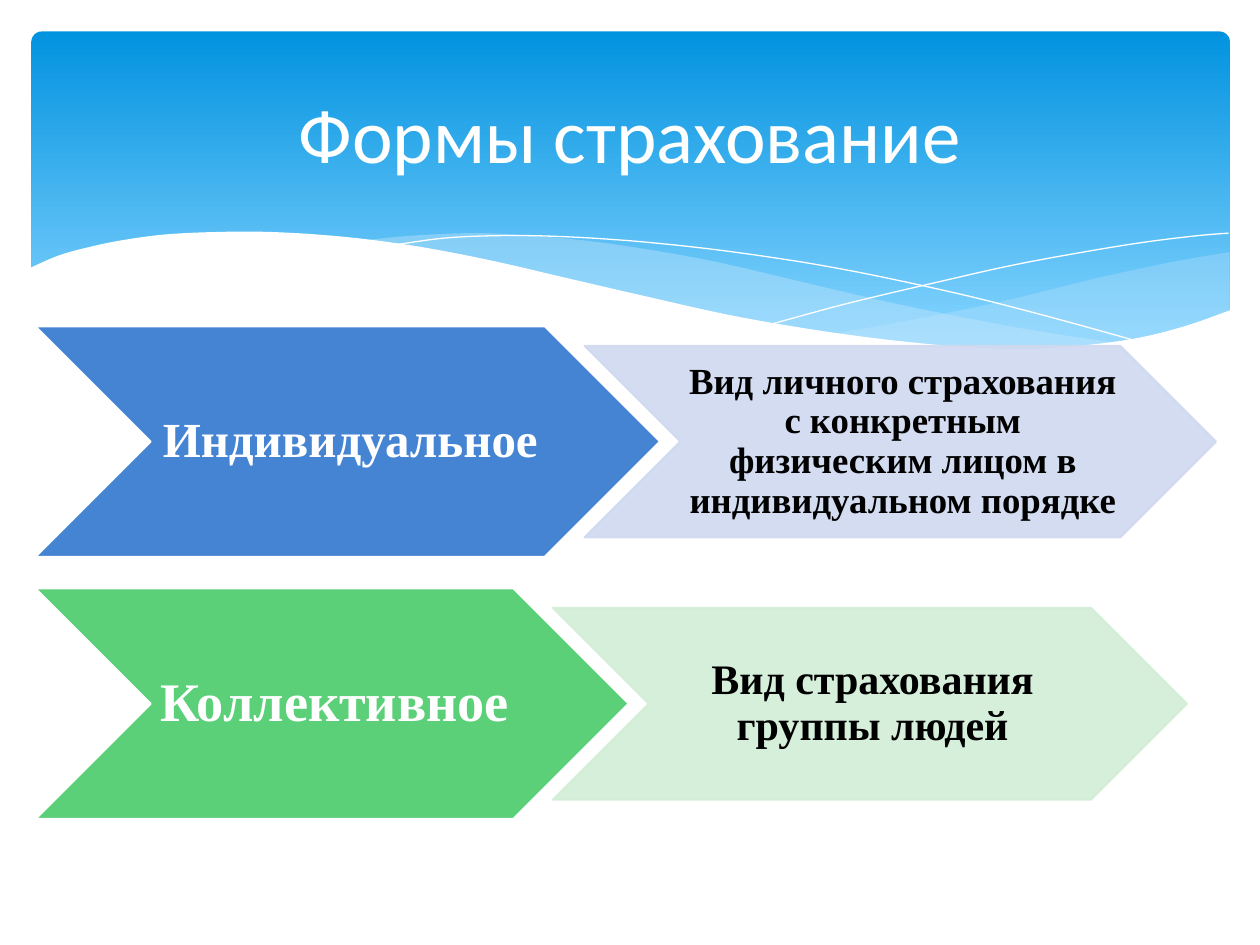
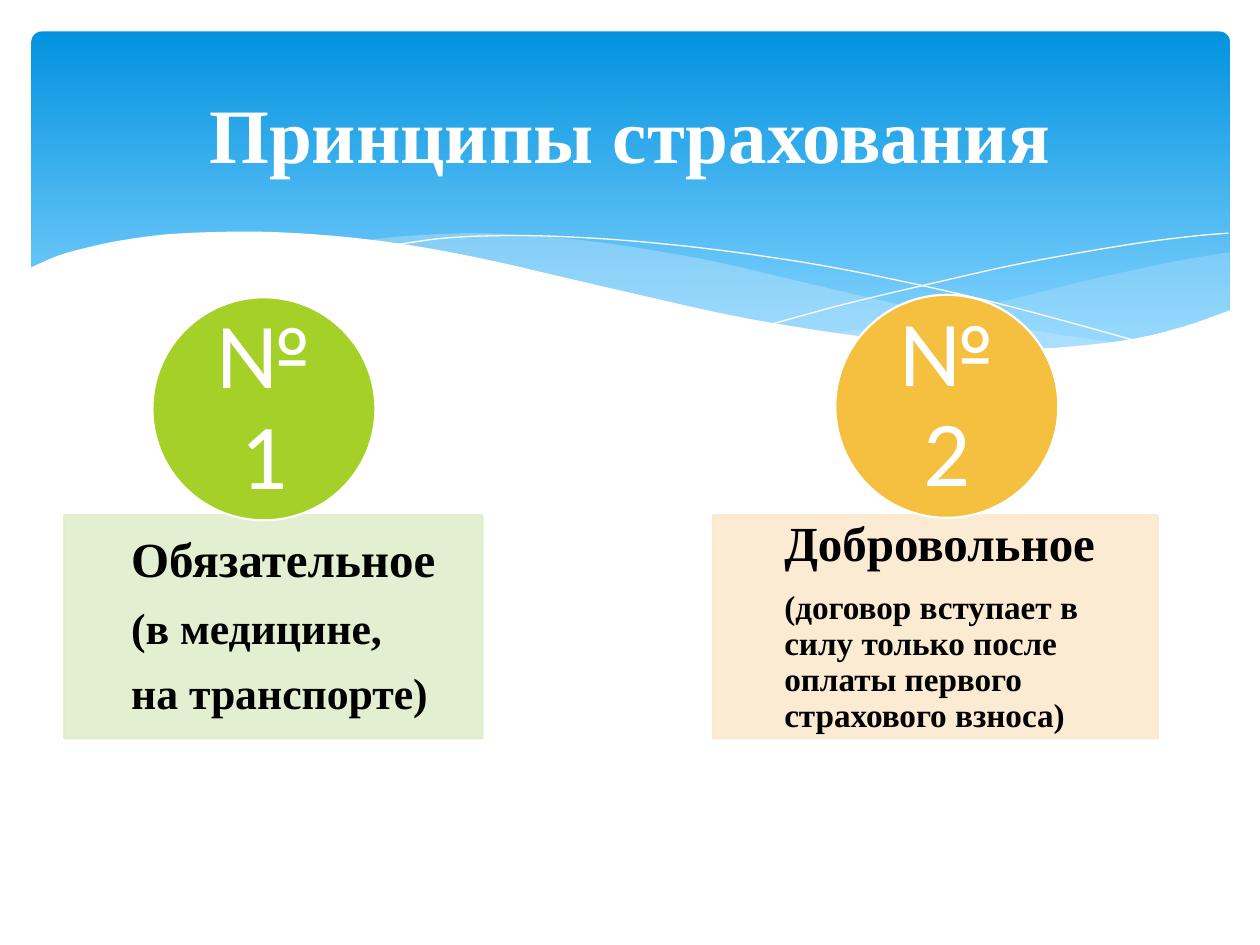
from dataclasses import dataclass

from lxml.etree import SubElement
from pptx import Presentation
from pptx.dml.color import RGBColor
from pptx.enum.shapes import MSO_SHAPE
from pptx.enum.text import MSO_ANCHOR, PP_ALIGN
from pptx.oxml.ns import qn
from pptx.util import Inches, Pt


@dataclass(frozen=True)
class Theme:
    white: str = "FFFFFF"
    black: str = "000000"
    sky_top: str = "0293E0"
    sky_bottom: str = "83D3FE"
    mist: str = "C6E7FC"
    blue: str = "4584D3"
    pale_blue: str = "CFD9EF"
    green: str = "5BD078"
    pale_green: str = "D2EED6"
    lime: str = "A5D028"
    pale_lime: str = "E1EECD"
    amber: str = "F5C040"
    pale_amber: str = "FBE9CF"
    sans: str = "Calibri"
    serif: str = "Times New Roman"
    title_size: int = 44
    number_size: int = 53
    heading_size: int = 28
    outline: float = 1.25
    panel_opacity: int = 90


THEME = Theme()

RIGHT_CREST = [(6.61, 2.65), (7.29, 2.53), (8.05, 2.37), (8.61, 2.23),
               (9.06, 2.13), (9.35, 2.07), (9.76, 2)]
RIGHT_TROUGH = [(9.76, 2.47), (9.42, 2.59), (9.13, 2.67), (8.72, 2.74),
                (8.35, 2.77), (8.03, 2.78), (7.57, 2.76), (7.05, 2.71), (6.61, 2.65)]
LEFT_CREST = [(8.93, 2.73), (8.37, 2.65), (7.75, 2.54), (7.06, 2.4), (6.29, 2.22),
              (5.69, 2.08), (5.14, 1.98), (4.65, 1.91), (4.2, 1.87), (3.8, 1.85),
              (3.28, 1.87), (2.86, 1.91)]
LEFT_TROUGH = [(2.86, 1.91), (3.42, 1.99), (4.04, 2.11), (4.49, 2.22), (5.3, 2.4),
               (6.01, 2.55), (6.65, 2.66), (7.22, 2.74), (7.73, 2.77), (8.18, 2.78),
               (8.57, 2.77), (8.93, 2.73)]
FALLING_LINE = [(3.09, 1.95), (3.53, 1.89), (4.01, 1.87), (4.5, 1.88), (5.1, 1.92),
                (5.82, 2), (6.65, 2.13), (7.6, 2.33), (8.31, 2.51), (9.07, 2.72)]
RISING_LINE = [(6.13, 2.57), (6.72, 2.41), (7.48, 2.23), (8.06, 2.1), (8.66, 1.99),
               (9.1, 1.92), (9.51, 1.87), (9.75, 1.85)]
PAGE_EDGE = [(9.77, 2.46), (9.4, 2.59), (8.99, 2.69), (8.5, 2.75), (8.09, 2.77),
             (7.61, 2.75), (7.08, 2.7), (6.48, 2.62), (5.79, 2.5), (5.03, 2.33),
             (4.47, 2.2), (3.91, 2.07), (3.4, 1.97), (2.92, 1.9), (2.5, 1.86),
             (2.11, 1.84), (1.77, 1.84), (1.32, 1.86), (0.95, 1.91), (0.67, 1.97),
             (0.46, 2.03), (0.23, 2.13)]


def rgb(color):
    return RGBColor.from_string(color)


def set_attrs(obj, values):
    for name, value in values.items():
        setattr(obj, name, value)


def smooth(knots, steps=6):
    last = len(knots) - 1
    slopes = []
    for i in range(last + 1):
        (x0, y0), (x1, y1) = knots[max(i - 1, 0)], knots[min(i + 1, last)]
        slopes.append((y1 - y0) / (x1 - x0))
    points = [knots[0]]
    for i in range(last):
        (x0, y0), (x1, y1) = knots[i], knots[i + 1]
        dx = x1 - x0
        for n in range(1, steps + 1):
            t = n / steps
            y = ((1 + 2 * t) * (1 - t) ** 2 * y0 + t * (1 - t) ** 2 * dx * slopes[i]
                 + t * t * (3 - 2 * t) * y1 + t * t * (t - 1) * dx * slopes[i + 1])
            points.append((x0 + t * dx, y))
    return points


def paint(sp, fill=None, line=None, width=0, opacity=100):
    sp.shadow.inherit = False
    if fill:
        sp.fill.solid()
        sp.fill.fore_color.rgb = rgb(fill)
    else:
        sp.fill.background()
    if line:
        sp.line.color.rgb = rgb(line)
        sp.line.width = Pt(width)
    else:
        sp.line.fill.background()
    if opacity < 100:
        for color in sp._element.spPr.iter(qn("a:srgbClr")):
            SubElement(color, qn("a:alpha"), val=str(opacity * 1000))


def add_outline(slide, points, close=True, **look):
    path = [(Inches(x), Inches(y)) for x, y in points]
    builder = slide.shapes.build_freeform(*path[0])
    builder.add_line_segments(path[1:], close=close)
    paint(builder.convert_to_shape(), **look)


def add_preset(slide, kind, box, **look):
    sp = slide.shapes.add_shape(kind, *map(Inches, box))
    paint(sp, **look)
    return sp


def add_text(slide, box, lines, font, color, bold=False, align=PP_ALIGN.CENTER,
             insets=(0, 0, 0, 0), line_spacing=0.9, gap=0.4):
    tf = slide.shapes.add_textbox(*map(Inches, box)).text_frame
    left, top, right, bottom = map(Inches, insets)
    set_attrs(tf, {"word_wrap": True, "vertical_anchor": MSO_ANCHOR.MIDDLE,
                   "margin_left": left, "margin_top": top,
                   "margin_right": right, "margin_bottom": bottom})
    for i, (text, size) in enumerate(lines):
        p = tf.paragraphs[0] if i == 0 else tf.add_paragraph()
        set_attrs(p, {"alignment": align, "line_spacing": line_spacing,
                      "space_after": Pt(round(size * gap))})
        r = p.add_run()
        r.text = text
        set_attrs(r.font, {"name": font, "size": Pt(size), "bold": bold})
        r.font.color.rgb = rgb(color)


def add_sky(slide):
    sky = add_preset(slide, MSO_SHAPE.ROUNDED_RECTANGLE, (0.25, 0.25, 9.51, 2.7))
    sky.adjustments[0] = 0.03
    sky.fill.gradient()
    sky.fill.gradient_angle = 270
    stops = ((0, THEME.sky_top), (0.9, THEME.sky_bottom))
    for stop, (position, color) in zip(sky.fill.gradient_stops, stops):
        stop.position = position
        stop.color.rgb = rgb(color)
    add_outline(slide, smooth(RIGHT_CREST) + smooth(RIGHT_TROUGH),
                fill=THEME.mist, opacity=29)
    add_outline(slide, smooth(LEFT_CREST) + smooth(LEFT_TROUGH),
                fill=THEME.mist, opacity=40)
    for curve in (FALLING_LINE, RISING_LINE):
        add_outline(slide, smooth(curve), close=False, line=THEME.white)
    add_outline(slide, smooth(PAGE_EDGE) + [(0.23, 3.29), (9.77, 3.29)],
                fill=THEME.white)


def new_slide(prs, title, font, bold=False):
    slide = prs.slides.add_slide(prs.slide_layouts[6])
    add_sky(slide)
    add_text(slide, (0.5, 0.37, 9, 1.37), [(title, THEME.title_size)], font,
             THEME.white, bold, insets=(0.1, 0.05, 0.1, 0.05), line_spacing=1, gap=0)
    return slide


def add_chevron(slide, box, text, size, color, **look):
    left, top, width, height = box
    add_preset(slide, MSO_SHAPE.CHEVRON, box, width=THEME.outline, **look)
    add_text(slide, (left + height / 2, top, width - height, height), [(text, size)],
             THEME.serif, color, bold=True, insets=(0.04, 0.02, 0, 0.02))


def add_form_row(slide, top, lead, detail):
    left, lead_height, detail_height, overlap = 0.28, 1.83, 1.52, 0.6
    text, size, width, fill = lead
    add_chevron(slide, (left, top, width, lead_height), text, size, THEME.white,
                fill=fill, line=THEME.white)
    detail_left = left + width - overlap
    detail_top = top + (lead_height - detail_height) / 2
    text, size, width, fill = detail
    add_chevron(slide, (detail_left, detail_top, width, detail_height), text, size,
                THEME.black, fill=fill, line=fill, opacity=THEME.panel_opacity)


def add_principle(slide, number, circle_at, color, panel_left, panel_width,
                  panel_color, lines):
    top, side = 4.09, 1.77
    indent = 0.16 * panel_width
    add_preset(slide, MSO_SHAPE.RECTANGLE, (panel_left, top, panel_width, side),
               fill=panel_color, line=panel_color, width=THEME.outline,
               opacity=THEME.panel_opacity)
    add_text(slide, (panel_left + indent, top, panel_width - indent, side), lines,
             THEME.serif, THEME.black, bold=True, align=PP_ALIGN.LEFT,
             insets=(0, 0.22, 0.22, 0.22))
    x, y = circle_at
    add_preset(slide, MSO_SHAPE.OVAL, (x, y, side, side), fill=color,
               line=THEME.white, width=THEME.outline)
    add_text(slide, (x + 0.26, y + 0.26, side - 0.52, side - 0.52),
             [(number, THEME.number_size)], THEME.sans, THEME.white)


def build_forms(prs):
    slide = new_slide(prs, "Формы страхование", THEME.sans)
    add_form_row(slide, 2.59,
                 ("Индивидуальное", 28, 4.96, THEME.blue),
                 ("Вид личного страхования с конкретным физическим лицом "
                  "в индивидуальном порядке", 21, 5.01, THEME.pale_blue))
    add_form_row(slide, 4.67,
                 ("Коллективное", 31, 4.71, THEME.green),
                 ("Вид страхования группы людей", 24, 5.03, THEME.pale_green))


def build_principles(prs):
    slide = new_slide(prs, "Принципы страхования", THEME.serif, bold=True)
    add_principle(slide, "№ 1", (1.21, 2.36), THEME.lime, 0.51, 3.32, THEME.pale_lime,
                  [("Обязательное", THEME.heading_size),
                   ("(в медицине,", 25), ("на транспорте)", 25)])
    add_principle(slide, "№ 2", (6.63, 2.34), THEME.amber, 5.66, 3.53, THEME.pale_amber,
                  [("Добровольное", THEME.heading_size),
                   ("(договор вступает в силу только после оплаты первого "
                    "страхового взноса)", 19)])


def main():
    prs = Presentation()
    set_attrs(prs, {"slide_width": Inches(10), "slide_height": Inches(7.5)})
    build_forms(prs)
    build_principles(prs)
    prs.save("out.pptx")


if __name__ == "__main__":
    main()
